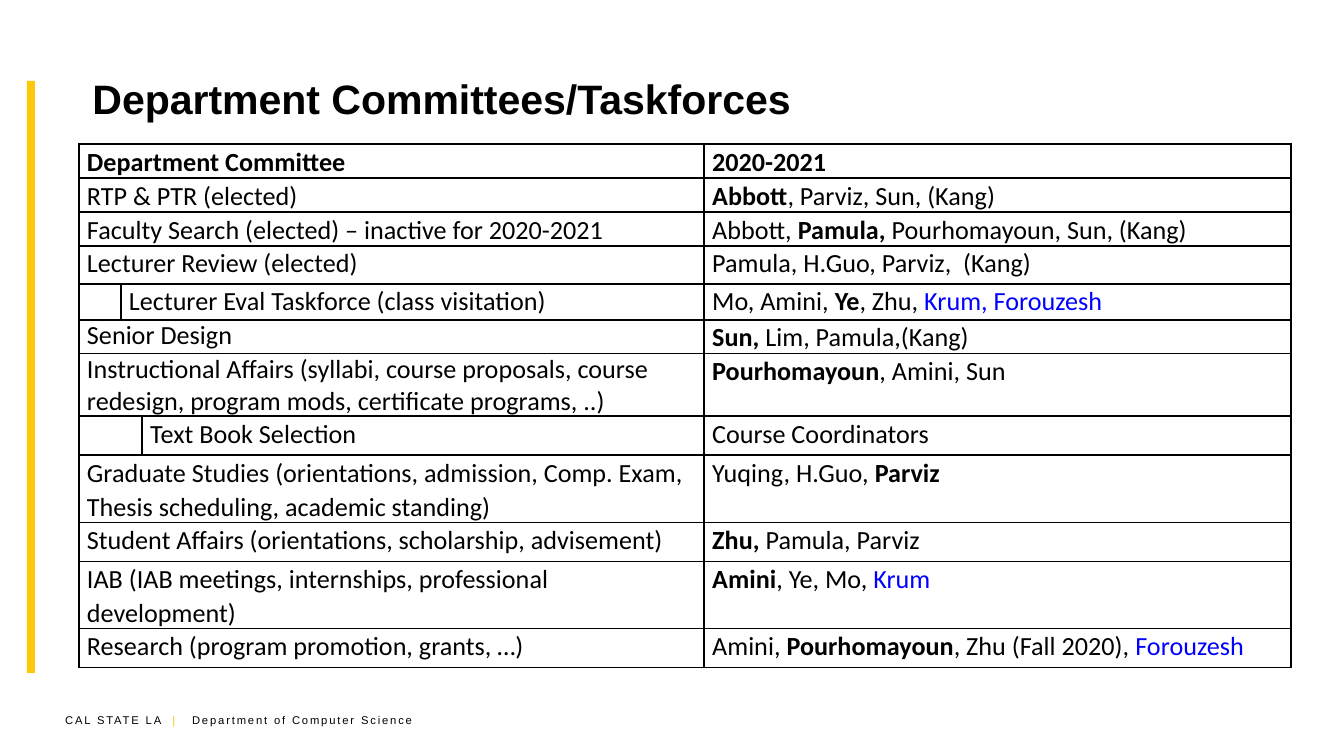
"""Build the department committees slide with its membership table."""
from lxml import etree
from pptx import Presentation
from pptx import util as u
from pptx.dml.color import RGBColor
from pptx.enum import shapes, text
from pptx.oxml.ns import qn

BLACK, GOLD, BLUE = "000000", "FCC90A", "0000FF"
COLUMN_WIDTHS = [42, 15, 562, 587]
FULL, INDENTED, DEEP = (0, 2), (1, 2), (2, 2)


def px(length):
    return u.Emu(round(length * 914400 / 134.4))


def color(value):
    return RGBColor.from_string(value)


def plain(words):
    return words, False, BLACK


def bold(words):
    return words, True, BLACK


def blue(words):
    return words, False, BLUE


COMMITTEES = [
    (34, FULL, 1.07, bold("Department Committee"), [bold("2020-2021")]),
    (34, FULL, 1.07, plain("RTP & PTR (elected)"),
     [bold("Abbott"), plain(", Parviz, Sun, (Kang)")]),
    (34, FULL, 1.07, plain("Faculty Search (elected) – inactive for 2020-2021"),
     [plain("Abbott, "), bold("Pamula, "), plain("Pourhomayoun, Sun, (Kang)")]),
    (38, FULL, 1.07, plain("Lecturer Review (elected)"),
     [plain("Pamula, H.Guo, Parviz,  (Kang)")]),
    (36, INDENTED, 1.07, plain("Lecturer Eval Taskforce (class visitation)"),
     [plain("Mo, Amini, "), bold("Ye"), plain(", Zhu, "), blue("Krum, Forouzesh")]),
    (30, FULL, 1, plain("Senior Design"),
     [bold("Sun, "), plain("Lim, Pamula,(Kang)")]),
    (54, FULL, 1, plain("Instructional Affairs (syllabi, course proposals, course "
                        "redesign, program mods, certificate programs, ..)"),
     [bold("Pourhomayoun"), plain(", Amini, Sun")]),
    (39, DEEP, 1.07, plain("Text Book Selection"), [plain("Course Coordinators")]),
    (58, FULL, 1.07, plain("Graduate Studies (orientations, admission, Comp. Exam, "
                           "Thesis scheduling, academic standing)"),
     [plain("Yuqing, H.Guo, "), bold("Parviz")]),
    (39, FULL, 1.07, plain("Student Affairs (orientations, scholarship, advisement)"),
     [bold("Zhu, "), plain("Pamula, Parviz")]),
    (39, FULL, 1.07, plain("IAB (IAB meetings, internships, professional development)"),
     [bold("Amini"), plain(", Ye, Mo, "), blue("Krum")]),
    (39, FULL, 1.07, plain("Research (program promotion, grants, …)"),
     [plain("Amini, "), bold("Pourhomayoun"), plain(", Zhu (Fall 2020), "),
      blue("Forouzesh")]),
]


class SlideBuilder:
    def __init__(self, presentation):
        self.heading_font, self.table_font = "Arial", "Calibri"
        self.slide = presentation.slides.add_slide(presentation.slide_layouts[5])

    def add_run(self, paragraph, words, size, font, is_bold=False, value=BLACK):
        run = paragraph.add_run()
        run.text = words
        run.font.size = u.Pt(size)
        run.font.name = font
        run.font.bold = is_bold
        run.font.color.rgb = color(value)
        return run

    def title(self, words, left, top, width, height):
        shape = self.slide.shapes.title
        shape.left, shape.top = px(left), px(top)
        shape.width, shape.height = px(width), px(height)
        frame = shape.text_frame
        frame.auto_size = text.MSO_AUTO_SIZE.NONE
        frame.vertical_anchor = text.MSO_ANCHOR.MIDDLE
        paragraph = frame.paragraphs[0]
        paragraph.alignment = text.PP_ALIGN.LEFT
        self.add_run(paragraph, words, 22, self.heading_font, True)

    def bar(self, left, top, width, height):
        shape = self.slide.shapes.add_shape(
            shapes.MSO_SHAPE.RECTANGLE, px(left), px(top), px(width), px(height))
        shape.shadow.inherit = False
        shape.fill.solid()
        shape.fill.fore_color.rgb = color(GOLD)
        shape.line.fill.background()

    def footer(self, parts, left, top, width, height):
        shape = self.slide.shapes.add_textbox(px(left), px(top), px(width), px(height))
        frame = shape.text_frame
        frame.word_wrap = True
        frame.auto_size = text.MSO_AUTO_SIZE.SHAPE_TO_FIT_TEXT
        for words, value, spacing in parts:
            run = self.add_run(frame.paragraphs[0], words, 6, self.heading_font,
                               value=value)
            run.font._element.set("spc", str(spacing))

    def style_cell(self, cell):
        cell.margin_left = cell.margin_right = px(8)
        cell.margin_top = cell.margin_bottom = 0
        cell.fill.background()
        properties = cell._tc.get_or_add_tcPr()
        for index, side in enumerate(("lnL", "lnR", "lnT", "lnB")):
            line = etree.Element(qn(f"a:{side}"), w=str(u.Pt(1)))
            fill = etree.SubElement(line, qn("a:solidFill"))
            etree.SubElement(fill, qn("a:srgbClr"), val=BLACK)
            properties.insert(index, line)
        paragraph = cell.text_frame.paragraphs[0]
        etree.SubElement(paragraph._p, qn("a:endParaRPr"), sz="1400")

    def fill_cell(self, cell, runs, spacing):
        paragraph = cell.text_frame.paragraphs[0]
        paragraph.line_spacing = float(spacing)
        for words, is_bold, value in runs:
            self.add_run(paragraph, words, 14, self.table_font, is_bold, value)

    def table(self, rows, left, top):
        table = self.slide.shapes.add_table(
            len(rows), len(COLUMN_WIDTHS), px(left), px(top),
            px(sum(COLUMN_WIDTHS)), px(sum(row[0] for row in rows))).table
        table.first_row = table.horz_banding = False
        for column, width in zip(table.columns, COLUMN_WIDTHS):
            column.width = px(width)
        for cell in table.iter_cells():
            self.style_cell(cell)
        for index, (height, (first, last), spacing, name, members) in enumerate(rows):
            table.rows[index].height = px(height)
            label = table.cell(index, first)
            if first < last:
                label.merge(table.cell(index, last))
            else:
                table.cell(index, 0).merge(table.cell(index, first - 1))
            self.fill_cell(label, [name], spacing)
            self.fill_cell(table.cell(index, 3), members, 1.07)


def main():
    presentation = Presentation()
    presentation.slide_width, presentation.slide_height = px(1344), px(756)
    builder = SlideBuilder(presentation)
    builder.footer([("CAL STATE LA ", BLACK, 100), (" |", GOLD, 100),
                    (" ", GOLD, 630), ("Department of Computer Science", BLACK, 100)],
                   52, 707, 392, 27)
    builder.bar(27, 81, 8, 592)
    builder.title("Department Committees/Taskforces", 79, 35, 1196, 127)
    builder.table(COMMITTEES, 79, 144)
    presentation.save("out.pptx")


if __name__ == "__main__":
    main()
